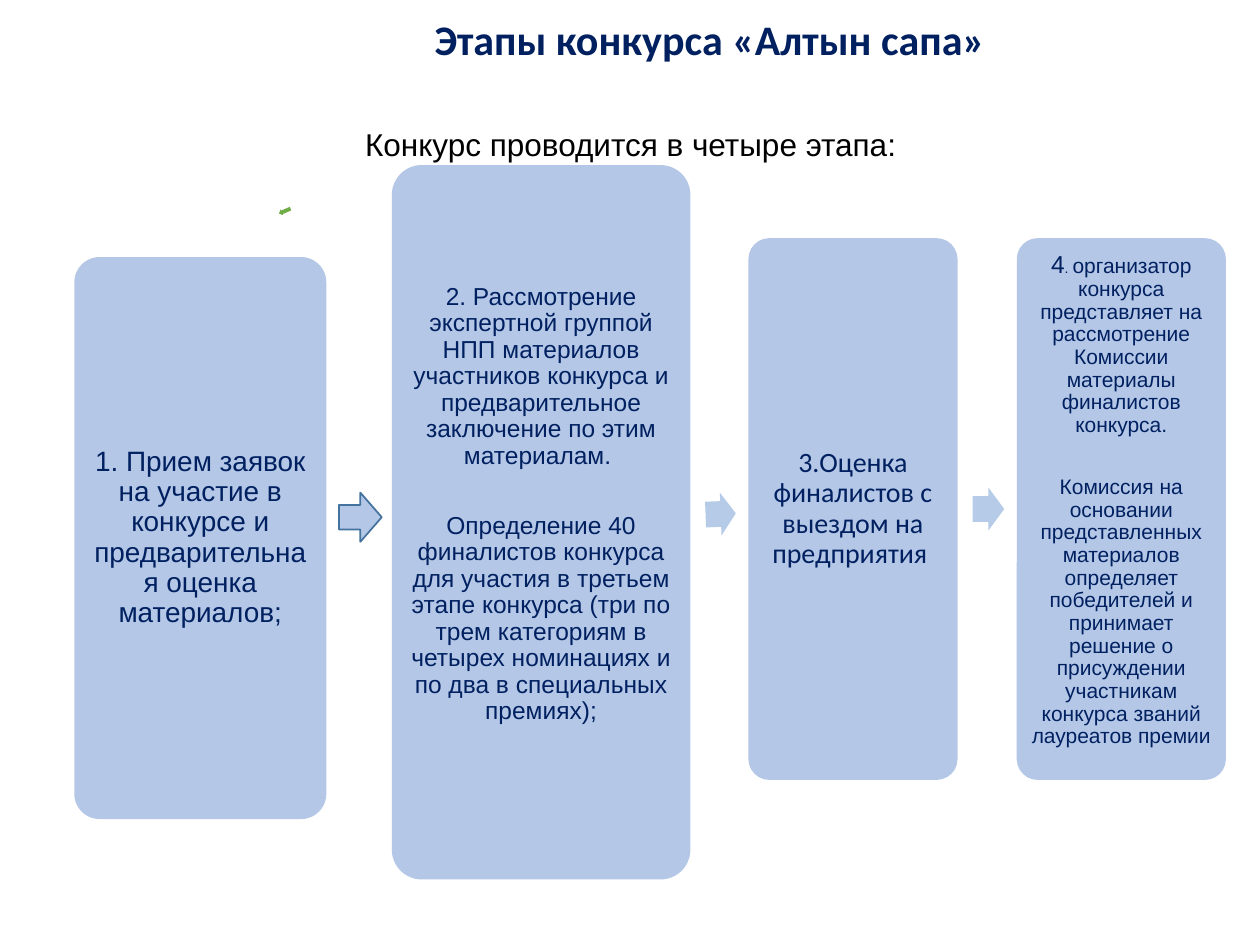
from pptx import Presentation
from pptx.dml.color import RGBColor
from pptx.enum.shapes import MSO_SHAPE
from pptx.enum.text import MSO_ANCHOR, PP_ALIGN
from pptx.util import Inches, Pt

COLORS = {
    "navy": "002060",
    "black": "000000",
    "card": "B4C7E7",
    "arrow": "B5CBE7",
    "green": "70AD47",
    "outline": "43739E",
}
TITLE = "Этапы конкурса «Алтын сапа»"
SUBTITLE = "Конкурс проводится в четыре этапа:"

STAGES = [
    {
        "area": (5.9, 27.2, 20, 59.47),
        "text": [[("1. Прием заявок на участие в конкурсе и предварительная оценка материалов;", 16)]],
    },
    {
        "area": (31.1, 17.47, 23.7, 75.6),
        "text": [
            [("2. Рассмотрение экспертной группой НПП материалов участников конкурса "
              "и предварительное заключение по этим материалам. ", 14)],
            [("Определение 40 финалистов конкурса для участия в третьем этапе конкурса "
              "(три по трем категориям в четырех номинациях и по два в специальных премиях);", 14)],
        ],
        "gap": 25,
        "inset": 0.06,
        "tail": 0.28,
    },
    {
        "area": (59.4, 25.2, 16.6, 57.33),
        "text": [[("3.Оценка финалистов с выездом на предприятия ", 16)]],
        "font": "Calibri",
    },
    {
        "area": (80.7, 25.2, 16.6, 57.33),
        "text": [
            [("4", 14), (". ", 8),
             ("организатор конкурса представляет на рассмотрение Комиссии материалы финалистов конкурса.", 12)],
            [("Комиссия на основании представленных материалов определяет победителей и принимает "
              "решение о присуждении участникам конкурса званий лауреатов премии ", 12)],
        ],
        "gap": 22.5,
        "inset": 0.06,
        "tail": 0.14,
    },
]
ARROWS = [
    {"area": (22.1, 22, 1, 0.67), "color": "green", "turn": 157},
    {"area": (56, 52.13, 2.4, 4.53), "color": "arrow", "turn": 357.7},
    {"area": (77.2, 51.6, 2.5, 4.53), "color": "arrow"},
    {"area": (26.9, 52.13, 3.4, 5.2), "color": "card", "shaft": 0.5, "outline": "outline"},
]

deck = Presentation()
deck.slide_width, deck.slide_height = Inches(10), Inches(7.5)
page = deck.slides.add_slide(deck.slide_layouts[6])


def place(area):
    sides = (deck.slide_width, deck.slide_height) * 2
    return [round(share * side / 100) for share, side in zip(area, sides)]


def color(name):
    return RGBColor.from_string(COLORS[name])


def write(box, paragraphs, font="Arial", ink="navy", bold=False, align=PP_ALIGN.CENTER,
          anchor=MSO_ANCHOR.MIDDLE, wrap=True, inset=0.07, tail=0, gap=0, line=0.9):
    frame = box.text_frame
    frame.word_wrap = wrap
    frame.vertical_anchor = anchor
    frame.margin_left = frame.margin_right = frame.margin_top = Inches(inset)
    frame.margin_bottom = Inches(inset + tail)
    for index, pieces in enumerate(paragraphs):
        para = frame.add_paragraph() if index else frame.paragraphs[0]
        para.alignment = align
        para.line_spacing = line
        if index:
            para.space_before = Pt(gap)
        for text, size in pieces:
            span = para.add_run()
            span.text = text
            span.font.name = font
            span.font.size = Pt(size)
            span.font.bold = bold
            span.font.color.rgb = color(ink)


def draw(kind, area, fill, outline=None):
    shape = page.shapes.add_shape(kind, *place(area))
    shape.shadow.inherit = False
    shape.fill.solid()
    shape.fill.fore_color.rgb = color(fill)
    if outline:
        shape.line.color.rgb = color(outline)
        shape.line.width = Pt(1)
    else:
        shape.line.fill.background()
    return shape


subtitle = page.shapes.add_textbox(*place((28, 9.6, 61.4, 9.6)))
write(subtitle, [[(SUBTITLE, 18)]], ink="black", align=PP_ALIGN.JUSTIFY,
      anchor=MSO_ANCHOR.TOP, inset=0.1, line=1)

for stage in STAGES:
    card = draw(MSO_SHAPE.ROUNDED_RECTANGLE, stage["area"], "card")
    card.adjustments[0] = 0.1
    style = {key: value for key, value in stage.items() if key not in ("area", "text")}
    write(card, stage["text"], **style)

for item in ARROWS:
    arrow = draw(MSO_SHAPE.RIGHT_ARROW, item["area"], item["color"], item.get("outline"))
    arrow.adjustments[0] = item.get("shaft", 0.6)
    arrow.adjustments[1] = 0.5
    arrow.rotation = item.get("turn", 0)

title = page.shapes.add_textbox(*place((33.5, 0.8, 46.2, 6.67)))
write(title, [[(TITLE, 24)]], font="Calibri", bold=True, align=PP_ALIGN.LEFT,
      anchor=MSO_ANCHOR.TOP, wrap=False, inset=0.1, line=1)
title.text_frame.margin_top = title.text_frame.margin_bottom = Inches(0.05)
subtitle.text_frame.margin_top = Inches(0.34)

deck.save("out.pptx")
